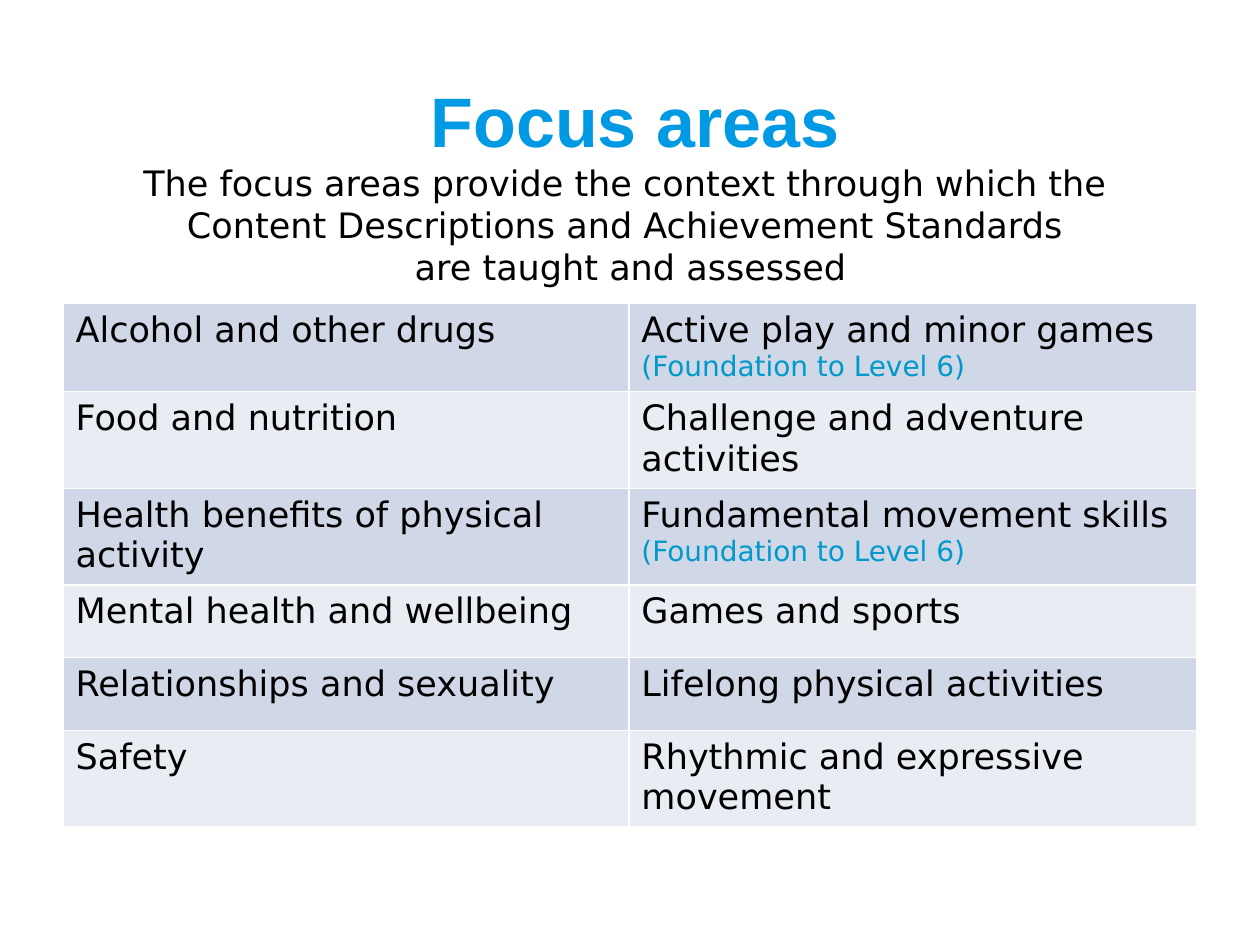
import lxml.etree
import pptx
import pptx.dml.color
import pptx.enum.text
import pptx.oxml.ns
import pptx.util

WIDTH, HEIGHT = pptx.util.Inches(10), pptx.util.Inches(7.5)
COLORS = {
    "title": "0099E3",
    "text": "000000",
    "note": "0099CC",
    "border": "FFFFFF",
    "odd_row": "D0D7E6",
    "even_row": "E9ECF3",
}
LEVELS = "(Foundation to Level 6)"
FOCUS_AREAS = [
    (["Alcohol and other drugs"], ["Active play and minor games", LEVELS]),
    (["Food and nutrition"], ["Challenge and adventure activities"]),
    (["Health benefits of physical activity"], ["Fundamental movement skills", LEVELS]),
    (["Mental health and wellbeing"], ["Games and sports"]),
    (["Relationships and sexuality"], ["Lifelong physical activities"]),
    (["Safety"], ["Rhythmic and expressive movement"]),
]
INTRODUCTION = [
    "The focus areas provide the context through which the ",
    "Content Descriptions and Achievement Standards ",
    "are taught and assessed",
]


def rgb(name):
    """Return the named colour."""
    return pptx.dml.color.RGBColor.from_string(COLORS[name])


def share_box(left, top, width, height):
    """Turn shares of the slide into a box of lengths."""
    return int(left * WIDTH), int(top * HEIGHT), int(width * WIDTH), int(height * HEIGHT)


def write_text(paragraph, text, size=20, color="text", font="DejaVu Sans",
               bold=False, align=pptx.enum.text.PP_ALIGN.LEFT):
    """Write one formatted line into a paragraph."""
    paragraph.alignment = align
    run = paragraph.add_run()
    run.text = text
    run.font.size = pptx.util.Pt(size)
    run.font.name = font
    run.font.bold = bold
    run.font.color.rgb = rgb(color)


def write_lines(frame, lines, formats):
    """Write each line as a paragraph with its own format."""
    for index, (text, line_format) in enumerate(zip(lines, formats)):
        paragraph = frame.add_paragraph() if index else frame.paragraphs[0]
        write_text(paragraph, text, **line_format)


def add_text_region(slide, box, lines, anchor, **line_format):
    """Place a centred, wrapping text box."""
    frame = slide.shapes.add_textbox(*box).text_frame
    frame.word_wrap = True
    frame.vertical_anchor = anchor
    line_format["align"] = pptx.enum.text.PP_ALIGN.CENTER
    write_lines(frame, lines, [line_format] * len(lines))


def add_borders(cell, width=1):
    """Draw thin lines on all four sides of a cell."""
    qualified = pptx.oxml.ns.qn
    properties = cell._tc.get_or_add_tcPr()
    for side in ("lnL", "lnR", "lnT", "lnB"):
        line = lxml.etree.SubElement(properties, qualified(f"a:{side}"), w=str(pptx.util.Pt(width)))
        fill = lxml.etree.SubElement(line, qualified("a:solidFill"))
        lxml.etree.SubElement(fill, qualified("a:srgbClr"), val=COLORS["border"])


def add_focus_table(slide, box, rows, row_height):
    """Place the banded two-column table of focus areas."""
    left, top, width, height = box
    table = slide.shapes.add_table(len(rows), 2, left, top, width, height).table
    table.first_row = table.horz_banding = False
    table.columns[0].width = int(width * 0.499)
    table.columns[1].width = width - table.columns[0].width
    for row_index, row in enumerate(rows):
        table.rows[row_index].height = row_height
        for column_index, lines in enumerate(row):
            cell = table.cell(row_index, column_index)
            add_borders(cell)
            cell.fill.solid()
            cell.fill.fore_color.rgb = rgb("even_row" if row_index % 2 else "odd_row")
            write_lines(cell.text_frame, lines, [{}, {"size": 16, "color": "note"}])


def build_focus_slide(presentation):
    """Build the slide from its title, table and introduction."""
    slide = presentation.slides.add_slide(presentation.slide_layouts[6])
    anchors = pptx.enum.text.MSO_ANCHOR
    add_text_region(slide, share_box(0.079, 0.067, 0.85, 0.119), ["Focus areas"],
                    anchors.MIDDLE, size=40, color="title", font="Arial", bold=True)
    add_focus_table(slide, share_box(0.05, 0.321, 0.9, 0.464), FOCUS_AREAS, int(HEIGHT * 0.077))
    add_text_region(slide, share_box(0.032, 0.164, 0.937, 0.148), INTRODUCTION, anchors.TOP)


def main():
    """Create and save the presentation."""
    presentation = pptx.Presentation()
    presentation.slide_width, presentation.slide_height = WIDTH, HEIGHT
    build_focus_slide(presentation)
    presentation.save("out.pptx")


if __name__ == "__main__":
    main()
